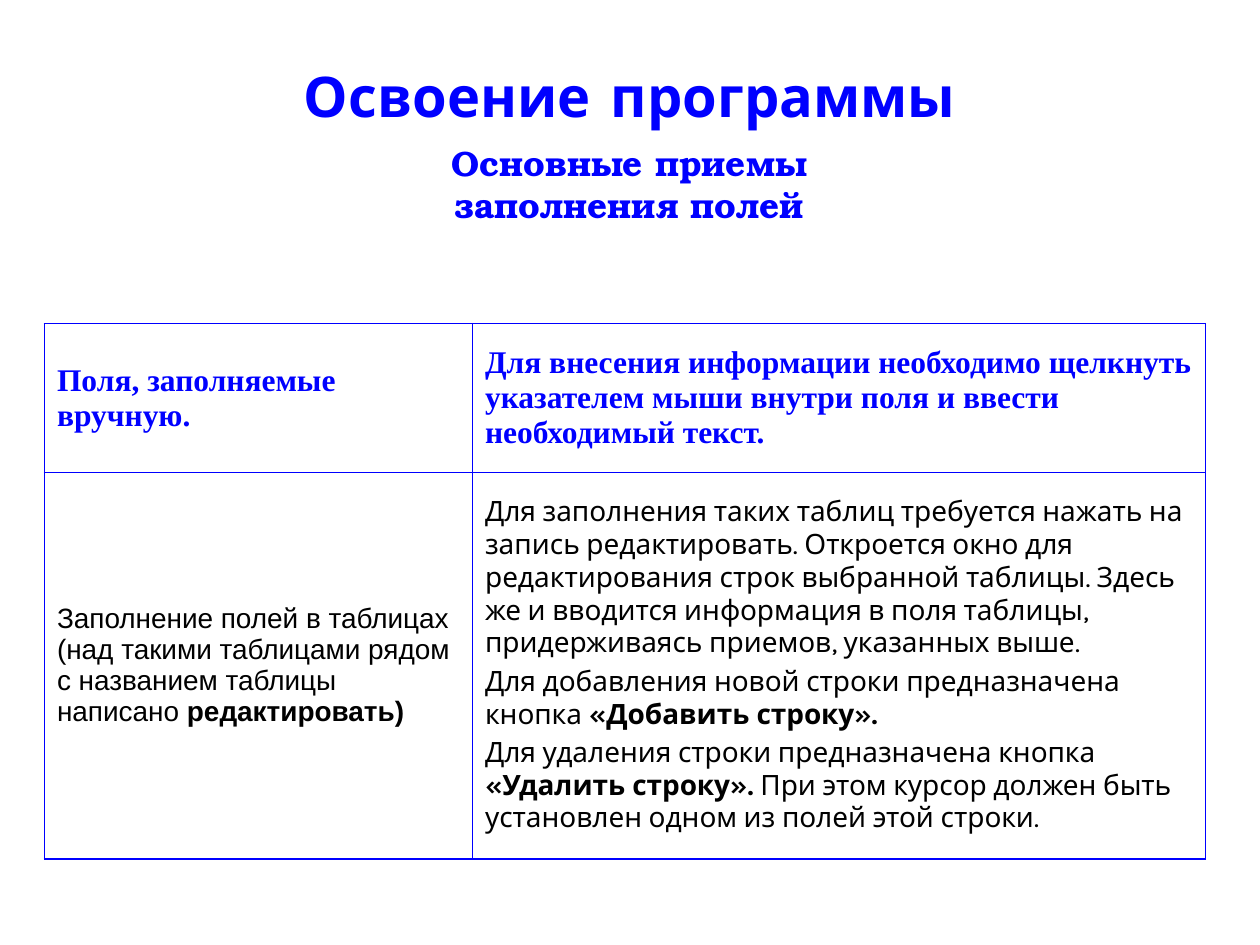
from pptx import Presentation
from pptx.dml.color import RGBColor
from pptx.enum.text import MSO_ANCHOR, MSO_AUTO_SIZE, PP_ALIGN
from pptx.oxml.ns import qn
from pptx.util import Pt
from lxml.etree import SubElement

# Content: table cells hold paragraphs, paragraphs hold (text, bold) runs
TITLE = "Освоение программы"
SUBTITLE = "Основные приемы заполнения полей"
ROWS = [
    ("header", [
        [[("Поля, заполняемые вручную.", True)]],
        [[("Для внесения информации необходимо щелкнуть указателем мыши "
           "внутри поля и ввести необходимый текст.", True)]],
    ]),
    ("body", [
        [[("Заполнение полей в таблицах (над такими таблицами рядом с названием "
           "таблицы написано ", False), ("редактировать)", True)]],
        [
            [("Для заполнения таких таблиц требуется нажать на запись редактировать. "
              "Откроется окно для редактирования строк выбранной таблицы. Здесь же и "
              "вводится информация в поля таблицы, придерживаясь приемов, указанных "
              "выше.", False)],
            [("Для добавления новой строки предназначена кнопка ", False),
             ("«Добавить строку».", True)],
            [("Для удаления строки предназначена кнопка ", False),
             ("«Удалить строку».", True),
             (" При этом курсор должен быть установлен одном из полей этой строки.",
              False)],
        ],
    ]),
]

# Theme: (font, size, colour) for each role, one entry per column in the table
BLUE, BLACK = "0000FF", "000000"
THEME = {
    "title": ("Comic Neue", 32, BLUE),
    "subtitle": ("TeX Gyre Bonum", 20, BLUE),
    "header": [("Times New Roman", 18, BLUE)] * 2,
    "body": [("Arial", 16, BLACK), ("Karla", 16, BLACK)],
    "border": (BLUE, 1),
    "paragraph_gap": 3.2,
}

# Layout in points
SLIDE_SIZE = (720, 540)
TITLE_BOX = (36, 20, 648, 68.5)
SUBTITLE_BOX = (194.5, 77, 330, 55.5)
TABLE_ORIGIN = (25.4, 184.9)
COLUMN_WIDTHS = (244.6, 418.8)
ROW_HEIGHTS = (85, 221)


def add_runs(paragraph, runs, style):
    name, size, colour = style
    for text, bold in runs:
        run = paragraph.add_run()
        run.text = text
        run.font.name = name
        run.font.size = Pt(size)
        run.font.bold = bold
        run.font.color.rgb = RGBColor.from_string(colour)


def fill_placeholder(shape, box, text, style, anchor):
    shape.left, shape.top, shape.width, shape.height = map(Pt, box)
    frame = shape.text_frame
    frame.word_wrap = True
    frame.auto_size = MSO_AUTO_SIZE.NONE
    frame.vertical_anchor = anchor
    paragraph = frame.paragraphs[0]
    paragraph.alignment = PP_ALIGN.CENTER
    paragraph.space_before = Pt(0)
    add_runs(paragraph, [(text, True)], style)


def add_borders(cell, colour, width):
    properties = cell._tc.get_or_add_tcPr()
    for side in ("a:lnL", "a:lnR", "a:lnT", "a:lnB"):
        line = SubElement(properties, qn(side), w=str(Pt(width)))
        fill = SubElement(line, qn("a:solidFill"))
        SubElement(fill, qn("a:srgbClr"), val=colour)


def fill_cell(cell, paragraphs, style):
    # Borders come before the fill in the cell properties
    add_borders(cell, *THEME["border"])
    cell.fill.background()
    cell.vertical_anchor = MSO_ANCHOR.MIDDLE
    frame = cell.text_frame
    for index, runs in enumerate(paragraphs):
        paragraph = frame.add_paragraph() if index else frame.paragraphs[0]
        paragraph.space_before = Pt(THEME["paragraph_gap"] if index else 0)
        add_runs(paragraph, runs, style)


def main():
    presentation = Presentation()
    presentation.slide_width, presentation.slide_height = map(Pt, SLIDE_SIZE)
    slide = presentation.slides.add_slide(presentation.slide_layouts[0])

    # Title and subtitle
    fill_placeholder(slide.shapes.title, TITLE_BOX, TITLE,
                     THEME["title"], MSO_ANCHOR.MIDDLE)
    fill_placeholder(slide.placeholders[1], SUBTITLE_BOX, SUBTITLE,
                     THEME["subtitle"], MSO_ANCHOR.TOP)

    # Table of field types
    size = (sum(COLUMN_WIDTHS), sum(ROW_HEIGHTS))
    table = slide.shapes.add_table(len(ROWS), len(COLUMN_WIDTHS),
                                   *map(Pt, TABLE_ORIGIN + size)).table
    table.first_row = table.horz_banding = False
    for column, width in zip(table.columns, COLUMN_WIDTHS):
        column.width = Pt(width)
    for row, height, (role, cells) in zip(table.rows, ROW_HEIGHTS, ROWS):
        row.height = Pt(height)
        for cell, paragraphs, style in zip(row.cells, cells, THEME[role]):
            fill_cell(cell, paragraphs, style)

    presentation.save("out.pptx")


if __name__ == "__main__":
    main()
